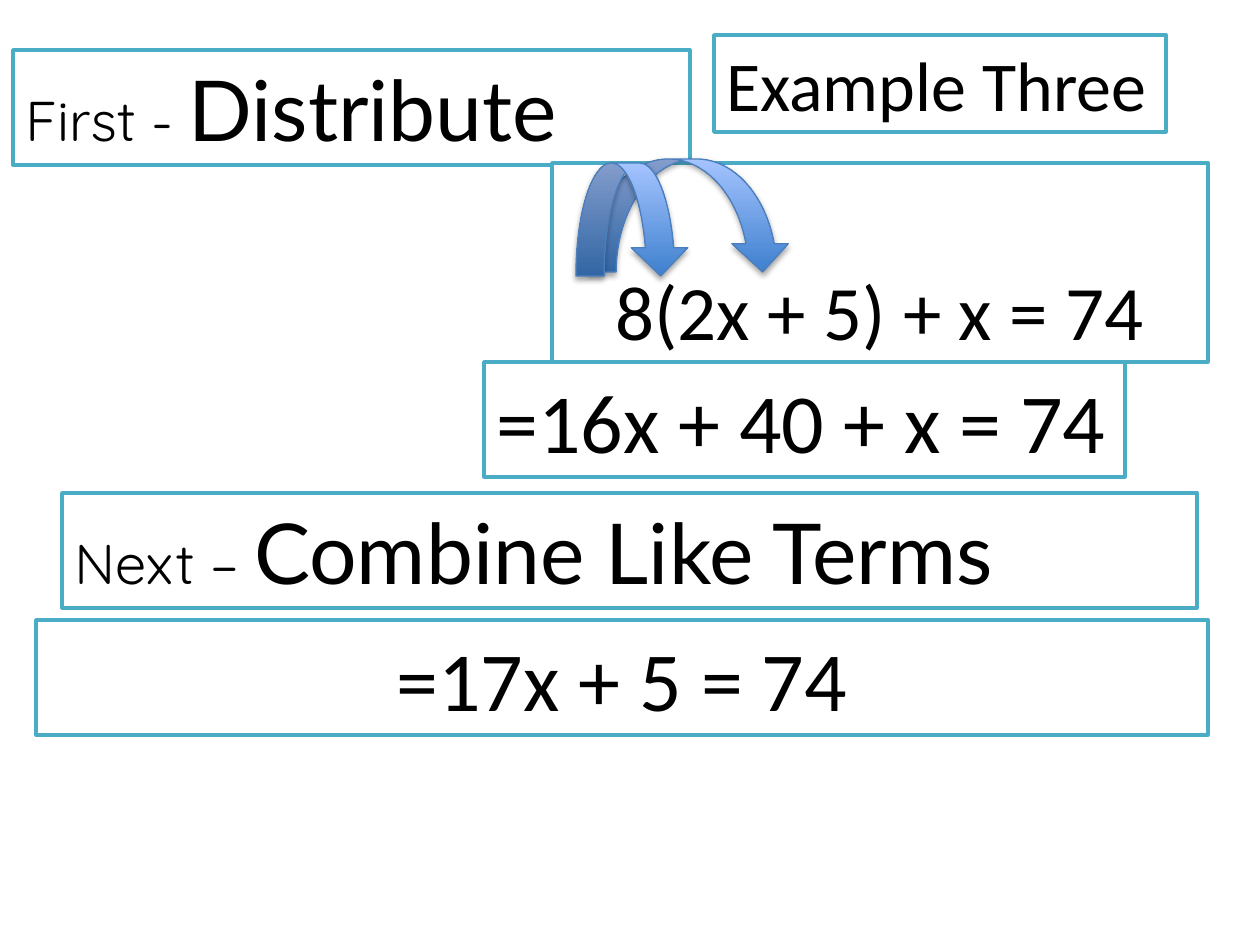
from dataclasses import dataclass

from lxml.etree import SubElement
from pptx import Presentation
from pptx.dml.color import RGBColor
from pptx.enum.shapes import MSO_SHAPE
from pptx.enum.text import MSO_ANCHOR, PP_ALIGN
from pptx.oxml.ns import qn
from pptx.util import Emu, Pt


@dataclass(frozen=True)
class Theme:
    paper: str = "FFFFFF"
    ink: str = "000000"
    frame: str = "4BACC6"
    edge: str = "4B7EBC"
    deep: str = "3F80CE"
    pale: str = "A4C4FF"
    lead: int = 32
    title: int = 40
    given: int = 44
    main: int = 48
    body: str = "Calibri"
    light: str = "Quicksand"
    bold: str = "Lato"


THEME = Theme()


def px(n):
    return Emu(round(n * 914400 / 126))


def tint(code):
    return RGBColor.from_string(code)


def add_shape(slide, kind, box, edge, width):
    shape = slide.shapes.add_shape(kind, *map(px, box))
    shape.line.color.rgb = tint(edge)
    shape.line.width = Pt(width)
    shape.shadow.inherit = False
    return shape


def add_panel(slide, box, runs, align=PP_ALIGN.LEFT):
    panel = add_shape(slide, MSO_SHAPE.RECTANGLE, box, THEME.frame, 2)
    panel.fill.solid()
    panel.fill.fore_color.rgb = tint(THEME.paper)
    frame = panel.text_frame
    frame.word_wrap = True
    frame.vertical_anchor = MSO_ANCHOR.BOTTOM
    line = frame.paragraphs[0]
    line.alignment = align
    for text, face, size in runs:
        run = line.add_run()
        run.text = text
        run.font.name = face
        run.font.size = Pt(size)
        run.font.color.rgb = tint(THEME.ink)


def add_step(slide, box, lead, name):
    add_panel(slide, box, [(lead, THEME.light, THEME.lead),
                           (name, THEME.bold, THEME.main)])


def add_math(slide, box, text, size=THEME.main, align=PP_ALIGN.CENTER):
    add_panel(slide, box, [(text, THEME.body, size)], align)


def add_arc(slide, box):
    arc = add_shape(slide, MSO_SHAPE.CURVED_DOWN_ARROW, box, THEME.edge, 0.75)
    arc.fill.gradient()
    arc.fill.gradient_angle = 90
    for stop, code in zip(arc.fill.gradient_stops, (THEME.deep, THEME.pale)):
        stop.color.rgb = tint(code)
    effects = arc.element.spPr.find(qn("a:effectLst"))
    shade = SubElement(effects, qn("a:outerShdw"), blurRad="40000",
                       dist="23000", dir="5400000", rotWithShape="0")
    color = SubElement(shade, qn("a:srgbClr"), val=THEME.ink)
    SubElement(color, qn("a:alpha"), val="35000")


def main():
    deck = Presentation()
    deck.slide_width, deck.slide_height = px(1260), px(945)
    slide = deck.slides.add_slide(deck.slide_layouts[6])
    add_step(slide, (13, 50, 677, 115), "First - ", "Distribute")
    add_math(slide, (484, 362, 641, 115), "=16x + 40 + x = 74",
             align=PP_ALIGN.LEFT)
    add_math(slide, (552, 163, 656, 199), "8(2x + 5) + x = 74", THEME.given)
    add_arc(slide, (588, 159, 203, 113))
    add_step(slide, (62, 493, 1135, 115), "Next – ", "Combine Like Terms")
    add_math(slide, (36, 620, 1172, 115), "=17x + 5 = 74")
    add_arc(slide, (576, 163, 113, 113))
    add_math(slide, (714, 35, 452, 97), "Example Three", THEME.title,
             PP_ALIGN.LEFT)
    deck.save("out.pptx")


if __name__ == "__main__":
    main()
